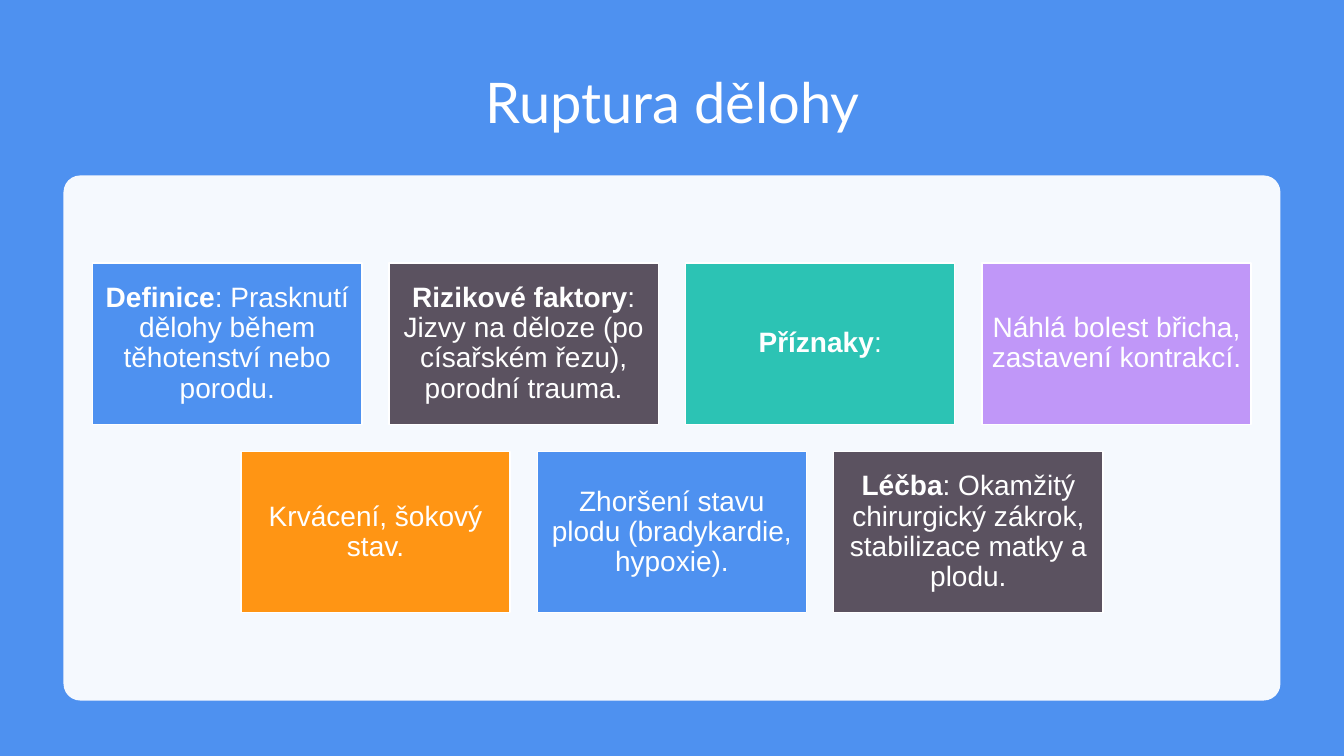
from dataclasses import dataclass

from lxml import etree
from pptx import Presentation
from pptx.dml.color import RGBColor
from pptx.enum.shapes import MSO_SHAPE as Shape
from pptx.enum.text import MSO_ANCHOR as Anchor, MSO_AUTO_SIZE as AutoSize, PP_ALIGN as Align
from pptx.oxml.ns import qn
from pptx.util import Inches, Pt

PAGE_WIDTH, PAGE_HEIGHT = 13.33, 7.5


@dataclass(frozen=True)
class Theme:
    blue: str = "4E91F0"
    slate: str = "5B5260"
    teal: str = "2CC3B4"
    violet: str = "C097F8"
    orange: str = "FF9514"
    white: str = "FFFFFF"
    title_font: str = "Lato"
    body_font: str = "Arial"
    title_size: int = 40
    body_size: int = 20


class SlideBuilder:
    def __init__(self, page, theme):
        self.page = page
        self.theme = theme

    def background(self, color):
        fill = self.page.background.fill
        fill.solid()
        fill.fore_color.rgb = RGBColor.from_string(color)

    def add_text(self, frame, runs, font, size):
        """Fill a text frame with centred white (text, bold) runs."""
        frame.word_wrap = True
        frame.auto_size = AutoSize.NONE
        frame.vertical_anchor = Anchor.MIDDLE
        para = frame.paragraphs[0]
        para.alignment = Align.CENTER
        para.line_spacing = 0.9
        for text, bold in runs:
            span = para.add_run()
            span.text = text
            span.font.name = font
            span.font.size = Pt(size)
            span.font.bold = bold
            span.font.color.rgb = RGBColor.from_string(self.theme.white)

    def title(self, text, left, top, width, height):
        box = self.page.shapes.title
        box.left, box.top = Inches(left), Inches(top)
        box.width, box.height = Inches(width), Inches(height)
        self.add_text(box.text_frame, [(text, False)],
                      self.theme.title_font, self.theme.title_size)

    def shape(self, kind, left, top, width, height, color):
        box = self.page.shapes.add_shape(
            kind, Inches(left), Inches(top), Inches(width), Inches(height))
        box.shadow.inherit = False
        box.fill.solid()
        box.fill.fore_color.rgb = RGBColor.from_string(color)
        return box

    def panel(self, left, top, width, height):
        box = self.shape(Shape.ROUNDED_RECTANGLE, left, top, width, height, self.theme.white)
        box.adjustments[0] = 0.032
        box.line.fill.background()
        color = next(box.element.iter(qn("a:srgbClr")))
        etree.SubElement(color, qn("a:alpha"), val="95000")

    def card(self, left, top, width, height, color, heading, text):
        box = self.shape(Shape.RECTANGLE, left, top, width, height, color)
        box.line.color.rgb = RGBColor.from_string(self.theme.white)
        box.line.width = Pt(1)
        frame = box.text_frame
        frame.margin_left = frame.margin_right = Inches(0.08)
        frame.margin_top = frame.margin_bottom = Inches(0.08)
        runs = [(heading, True)] if heading else []
        self.add_text(frame, runs + [(text, False)], self.theme.body_font, self.theme.body_size)

    def card_rows(self, rows, top, width, height, gap):
        """Place rows of cards, each row centred on the page."""
        for row_index, row in enumerate(rows):
            row_width = len(row) * (width + gap) - gap
            start = (PAGE_WIDTH - row_width) / 2
            for column, card in enumerate(row):
                self.card(start + column * (width + gap), top + row_index * (height + gap),
                          width, height, *card)


def main():
    theme = Theme()
    deck = Presentation()
    deck.slide_width, deck.slide_height = Inches(PAGE_WIDTH), Inches(PAGE_HEIGHT)
    slide = SlideBuilder(deck.slides.add_slide(deck.slide_layouts[5]), theme)

    # Backdrop, title and panel
    slide.background(theme.blue)
    slide.title("Ruptura dělohy", 0.92, 0.5, 11.5, 1.1)
    slide.panel(0.63, 1.74, 12.07, 5.21)

    # Cards: colour, bold heading, text
    rows = [
        [
            (theme.blue, "Definice", ": Prasknutí dělohy během těhotenství nebo porodu."),
            (theme.slate, "Rizikové faktory",
             ": Jizvy na děloze (po císařském řezu), porodní trauma."),
            (theme.teal, "Příznaky", ":"),
            (theme.violet, "", "Náhlá bolest břicha, zastavení kontrakcí."),
        ],
        [
            (theme.orange, "", "Krvácení, šokový stav."),
            (theme.blue, "", "Zhoršení stavu plodu (bradykardie, hypoxie)."),
            (theme.slate, "Léčba", ": Okamžitý chirurgický zákrok, stabilizace matky a plodu."),
        ],
    ]
    slide.card_rows(rows, top=2.61, width=2.67, height=1.6, gap=0.27)

    deck.save("out.pptx")


if __name__ == "__main__":
    main()
